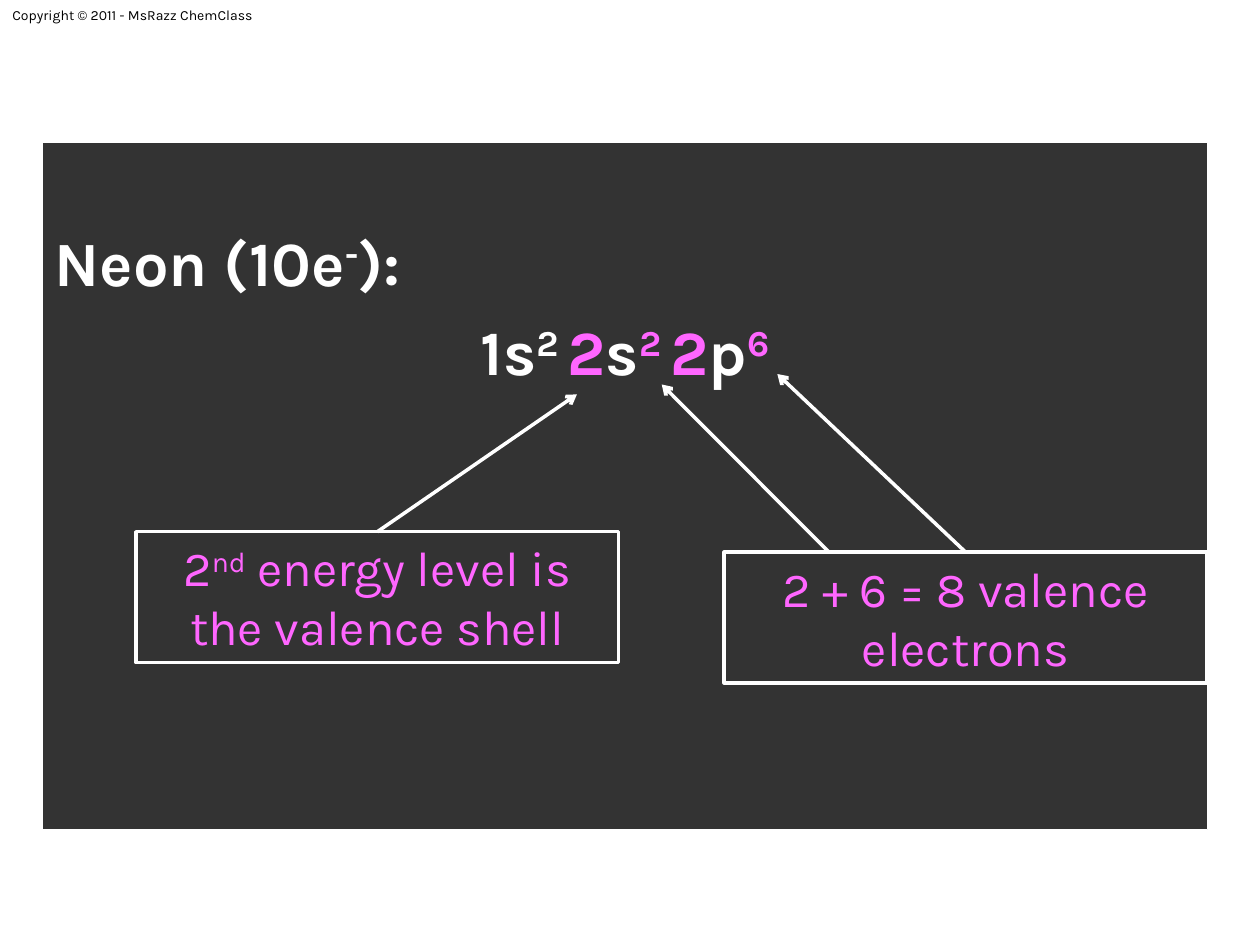
from lxml import etree
from pptx import Presentation
from pptx.dml.color import RGBColor
from pptx.enum.shapes import MSO_CONNECTOR, MSO_SHAPE
from pptx.enum.text import MSO_ANCHOR, PP_ALIGN
from pptx.oxml.ns import qn
from pptx.util import Cm, Pt

BLACK = RGBColor(0x00, 0x00, 0x00)
WHITE = RGBColor(0xFF, 0xFF, 0xFF)
PINK = RGBColor(0xFF, 0x66, 0xFF)


def add_runs(paragraph, runs, size, bold=False):
    """Add (text, colour, is_superscript) runs to a paragraph."""
    for text, colour, superscript in runs:
        run = paragraph.add_run()
        run.text = text
        font_format = {"name": "Karla", "size": Pt(size), "bold": bold}
        for name, value in font_format.items():
            setattr(run.font, name, value)
        run.font.color.rgb = colour
        if superscript:
            run._r.get_or_add_rPr().set("baseline", "30000")


def add_box(left, top, width, height, line_width):
    """Add an unfilled, white-edged rectangle with wrapped text at the top."""
    box = slide.shapes.add_shape(
        MSO_SHAPE.RECTANGLE, Cm(left), Cm(top), Cm(width), Cm(height))
    box.shadow.inherit = False
    box.fill.background()
    box.line.color.rgb = WHITE
    box.line.width = Pt(line_width)
    box.text_frame.word_wrap = True
    box.text_frame.vertical_anchor = MSO_ANCHOR.TOP
    return box


prs = Presentation()
prs.slide_width, prs.slide_height = Cm(25.4), Cm(19.05)
slide = prs.slides.add_slide(prs.slide_layouts[6])

# Copyright line
copyright_line = slide.shapes.add_textbox(0, 0, Cm(6.02), Cm(0.6))
copyright_line.text_frame.word_wrap = True
add_runs(copyright_line.text_frame.paragraphs[0],
         [("Copyright © 2011 - MsRazz ChemClass", BLACK, False)], 8)

# Translucent panel with the electron configuration
panel = add_box(0.85, 2.88, 23.5, 13.85, 0.75)
panel.fill.solid()
panel.fill.fore_color.rgb = BLACK
panel_colour = panel.fill._xPr.find(qn("a:solidFill"))[0]
etree.SubElement(panel_colour, qn("a:alpha")).set("val", "80000")
panel.text_frame.margin_top = Cm(1.63)

element = panel.text_frame.paragraphs[0]
element.alignment = PP_ALIGN.LEFT
add_runs(element, [("Neon (10e", WHITE, False), ("-", WHITE, True),
                   ("):", WHITE, False)], 36, bold=True)

configuration = panel.text_frame.add_paragraph()
configuration.alignment = PP_ALIGN.CENTER
configuration.space_before = Pt(7.5)
add_runs(configuration, [
    ("1s", WHITE, False), ("2 ", WHITE, True),
    ("2", PINK, False), ("s", WHITE, False), ("2 ", PINK, True),
    ("2", PINK, False), ("p", WHITE, False), ("6", PINK, True),
], 36, bold=True)

# Explanation boxes
explanations = [
    (2.74, 10.72, [("2", PINK, False), ("nd", PINK, True),
                   (" energy level is the valence shell", PINK, False)]),
    (14.6, 11.13, [("2 + 6 = 8 valence electrons", PINK, False)]),
]
boxes = []
for left, top, runs in explanations:
    box = add_box(left, top, 9.73, 2.64, 2)
    box.text_frame.paragraphs[0].alignment = PP_ALIGN.CENTER
    add_runs(box.text_frame.paragraphs[0], runs, 28)
    boxes.append(box)
shell_box, electrons_box = boxes

# Arrows from the boxes to the configuration
arrows = [
    (7.62, 10.72, 11.63, 7.95, shell_box),
    (19.48, 11.13, 15.67, 7.54, electrons_box),
    (16.71, 11.13, 13.34, 7.75, None),
]
for x1, y1, x2, y2, start_box in arrows:
    arrow = slide.shapes.add_connector(
        MSO_CONNECTOR.STRAIGHT, Cm(x1), Cm(y1), Cm(x2), Cm(y2))
    if start_box is not None:
        arrow.begin_connect(start_box, 0)
    arrow.line.color.rgb = WHITE
    arrow.line.width = Pt(2)
    etree.SubElement(arrow.line._get_or_add_ln(), qn("a:tailEnd")).set("type", "arrow")
    etree.SubElement(arrow._element.spPr, qn("a:effectLst"))

prs.save("out.pptx")
